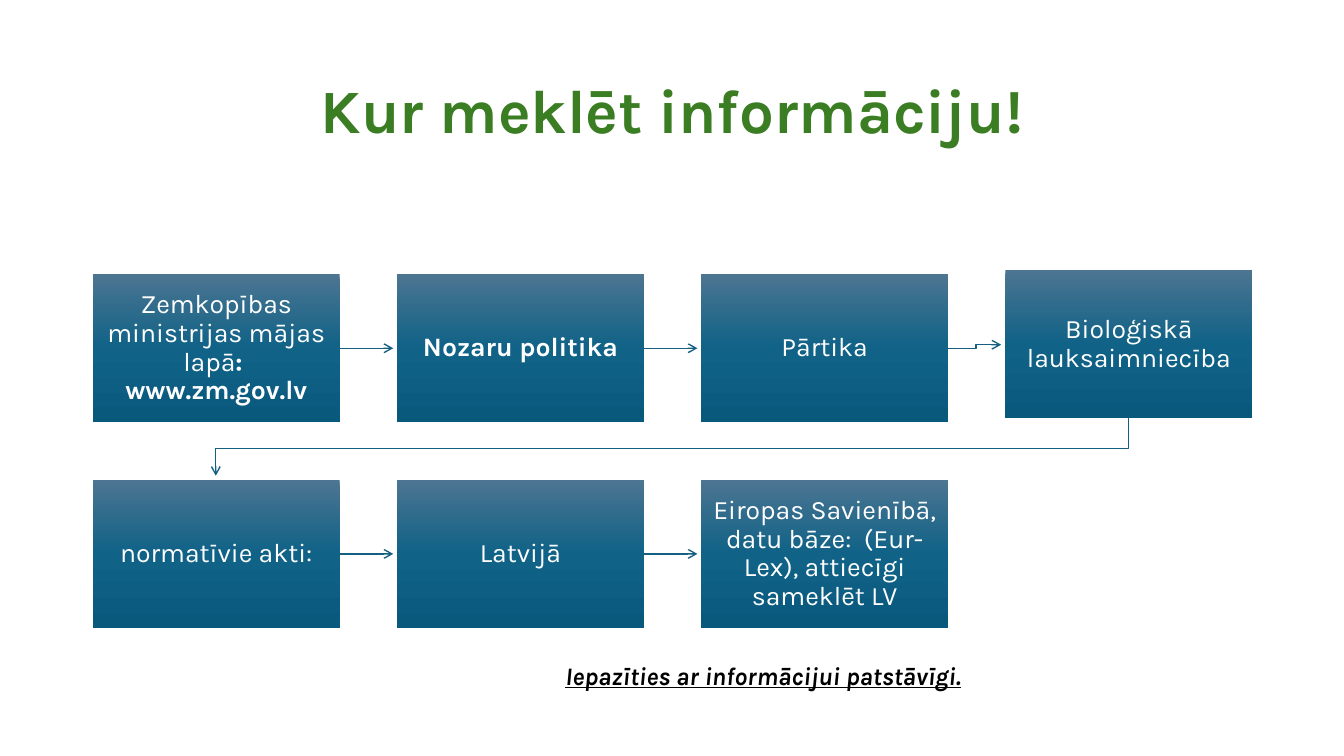
import copy

import pptx
import pptx.dml.color
import pptx.enum.shapes
import pptx.enum.text
import pptx.oxml
import pptx.oxml.ns
import pptx.util
from pptx.util import Inches

COLORS = {
    "title": "3B7D23",
    "arrow": "156082",
    "box_top": "4C7591",
    "box_middle": "106287",
    "box_bottom": "09597D",
    "white": "FFFFFF",
    "black": "000000",
}
FONT = "Karla"
BOX_WIDTH, BOX_HEIGHT = 2.45, 1.47
LEFT, COLUMN_STEP = 0.92, 3.017
ROW_TOPS = (2.72, 4.76)
LAST_BOX_TOP = 2.68
ARROW_LENGTH = 0.53


def color(name):
    return pptx.dml.color.RGBColor.from_string(COLORS[name])


def write_text(paragraph, text, size=19, ink="white", bold=False, italic=False, underline=False):
    run = paragraph.add_run()
    run.text = text
    font = run.font
    font.name, font.size = FONT, pptx.util.Pt(size)
    font.bold, font.italic, font.underline = bold, italic, underline
    font.color.rgb = color(ink)


class FlowSlide:
    """Holds the slide and the shared style of its boxes, arrows and text."""

    def __init__(self, presentation):
        self.slide = presentation.slides.add_slide(presentation.slide_layouts[6])
        self.shapes = self.slide.shapes
        self.center = pptx.enum.text.PP_ALIGN.CENTER
        self.middle = pptx.enum.text.MSO_ANCHOR.MIDDLE

    def text(self, left, top, width, height, text, centered=False, wrap=True, **style):
        frame = self.shapes.add_textbox(*map(Inches, (left, top, width, height))).text_frame
        frame.word_wrap = wrap
        paragraph = frame.paragraphs[0]
        if centered:
            frame.vertical_anchor = self.middle
            paragraph.alignment = self.center
            paragraph.line_spacing = 0.9
        write_text(paragraph, text, **style)

    def box(self, left, top, runs):
        shape = self.shapes.add_shape(
            pptx.enum.shapes.MSO_SHAPE.RECTANGLE,
            *map(Inches, (left, top, BOX_WIDTH, BOX_HEIGHT)))
        shape.shadow.inherit = False
        shape.line.fill.background()
        self.shade(shape)
        frame = shape.text_frame
        frame.word_wrap = True
        frame.vertical_anchor = self.middle
        frame.margin_left = frame.margin_right = Inches(0.12)
        frame.margin_top = frame.margin_bottom = Inches(0.13)
        paragraph = frame.paragraphs[0]
        paragraph.alignment = self.center
        paragraph.line_spacing = 0.9
        for text, bold in runs:
            write_text(paragraph, text, bold=bold)

    def shade(self, shape):
        shape.fill.gradient()
        shape.fill.gradient_angle = 270
        stop_list = shape._element.spPr.find(".//" + pptx.oxml.ns.qn("a:gsLst"))
        stop_list.append(copy.deepcopy(stop_list[-1]))
        names = ("box_top", "box_middle", "box_bottom")
        for index, (stop, name) in enumerate(zip(shape.fill.gradient_stops, names)):
            stop.position = index / 2
            stop.color.rgb = color(name)

    def arrow(self, *points):
        points = [(Inches(x), Inches(y)) for x, y in points]
        if len(points) == 2:
            shape = self.shapes.add_connector(
                pptx.enum.shapes.MSO_CONNECTOR.STRAIGHT, *points[0], *points[1])
        else:
            builder = self.shapes.build_freeform(*points[0])
            builder.add_line_segments(points[1:], close=False)
            shape = builder.convert_to_shape()
            shape.fill.background()
        shape.line.color.rgb = color("arrow")
        shape.line.width = pptx.util.Pt(1)
        namespace = pptx.oxml.ns.nsdecls("a")
        shape.line._get_or_add_ln().append(
            pptx.oxml.parse_xml(f'<a:tailEnd {namespace} type="arrow"/>'))
        shape._element.spPr.append(pptx.oxml.parse_xml(f"<a:effectLst {namespace}/>"))


def main():
    presentation = pptx.Presentation()
    presentation.slide_width = Inches(13.33)
    presentation.slide_height = Inches(7.5)
    flow = FlowSlide(presentation)

    # Title
    flow.text(0.92, 0.4, 11.5, 1.45, "Kur meklēt informāciju!",
              centered=True, size=44, ink="title", bold=True)

    # Steps, row by row
    rows = (
        (
            [("Zemkopības ministrijas mājas lapā", False), (":  www.zm.gov.lv", True)],
            [("Nozaru politika", True)],
            [("Pārtika", False)],
            [("Bioloģiskā lauksaimniecība", False)],
        ),
        (
            [("normatīvie akti:", False)],
            [("Latvijā", False)],
            [("Eiropas Savienībā, datu bāze:  (Eur-Lex), attiecīgi sameklēt LV", False)],
        ),
    )
    for row_top, row in zip(ROW_TOPS, rows):
        for column, runs in enumerate(row):
            left = LEFT + column * COLUMN_STEP
            flow.box(left, LAST_BOX_TOP if column == 3 else row_top, runs)
            # Straight arrows between boxes at the same height
            if column < 2:
                start, y = left + BOX_WIDTH, row_top + BOX_HEIGHT / 2
                flow.arrow((start, y), (start + ARROW_LENGTH, y))

    # Bent arrows to the raised box and on to the second row
    flow.arrow((9.4, 3.46), (9.68, 3.46), (9.68, 3.42), (9.93, 3.42))
    flow.arrow((11.19, 4.15), (11.19, 4.45), (2.14, 4.45), (2.14, 4.72))

    # Closing remark
    flow.text(5.51, 6.5, 4.28, 0.4, "Iepazīties ar informācijui patstāvīgi.",
              wrap=False, size=18, ink="black", bold=True, italic=True, underline=True)

    presentation.save("out.pptx")


if __name__ == "__main__":
    main()
